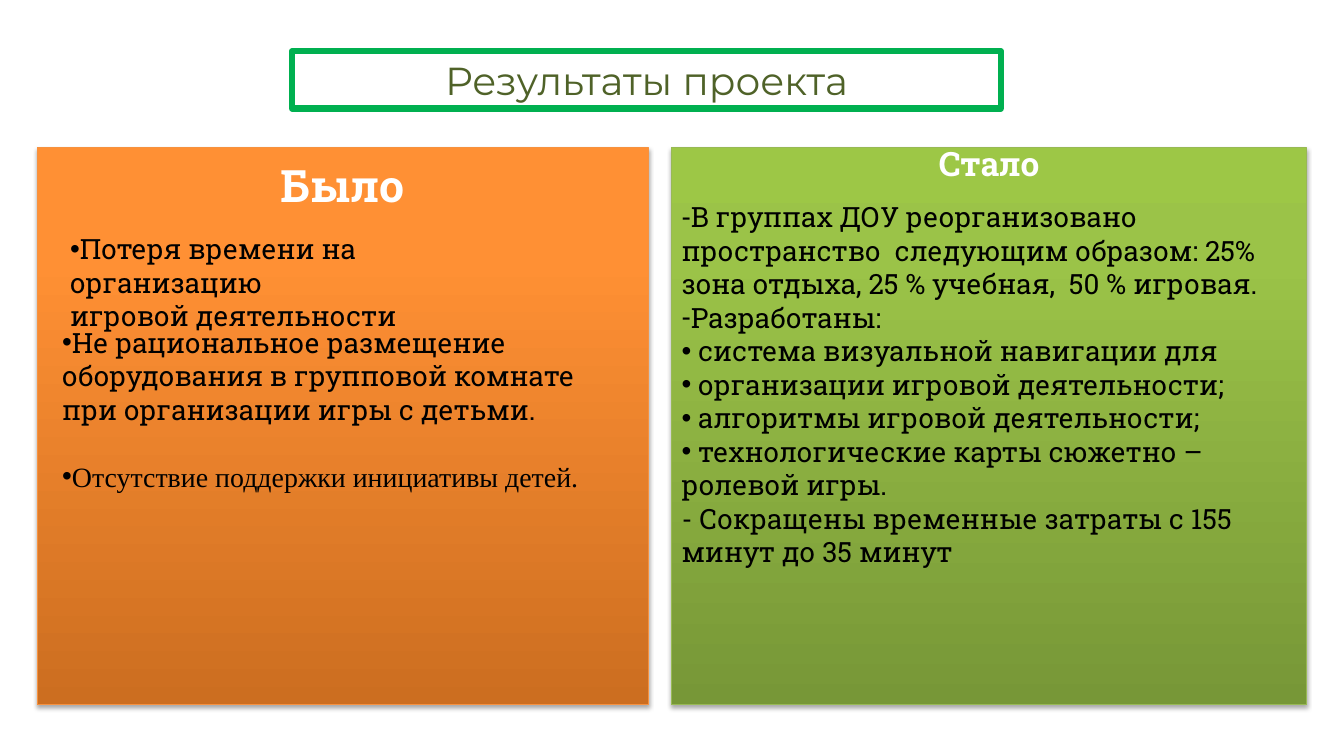
from lxml import etree
from pptx import Presentation
from pptx import util as u
from pptx.dml.color import RGBColor
from pptx.enum import text
from pptx.oxml import ns

# Content: list rows are (bullet, text)
TITLE = "Результаты проекта"
BEFORE, AFTER = "Было", "Стало"
LOSSES = [
    ("•", "Потеря времени на организацию"),
    ("", "игровой деятельности"),
]
FAULTS = [
    ("•", "Не рациональное размещение оборудования в групповой комнате "
          "при организации игры с детьми."),
    ("•", "Отсутствие поддержки инициативы детей."),
]
GAINS = [
    ("-", "В группах ДОУ реорганизовано пространство  следующим образом: "
          "25% зона отдыха, 25 % учебная,  50 % игровая."),
    ("-", "Разработаны:"),
    ("•", " система визуальной навигации для"),
    ("•", " организации игровой деятельности;"),
    ("•", " алгоритмы игровой деятельности;"),
    ("•", " технологические карты сюжетно – ролевой игры."),
    ("", "- Сокращены временные затраты с 155 минут до 35 минут"),
]


class Theme:
    title, slab, serif = "Montserrat", "Roboto Slab", "Times New Roman"
    olive, frame, white, black = "4F6228", "00B050", "FFFFFF", "000000"
    # Gradient stops from bottom to top, then the outline
    orange = [(0, "CC6E20"), (80, "FF9034"), (100, "FF9136")], "F69240"
    green = [(0, "779737"), (80, "9BC348"), (100, "9DC746")], "98B955"
    big, head, sub, body = 28, 32, 24, 20


# Places: left, top, width, height in percent of the slide
SPOTS = {
    "title": (21.73, 6.82, 52.73, 7.62),
    "before": (2.76, 19.65, 45.48, 74.2),
    "after": (49.96, 19.65, 47.27, 74.2),
    "losses": (4.48, 30.21, 33.6, 14.8),
    "faults": (3.88, 42.65, 43.76, 23.8),
    "gains": (49.96, 25.94, 46.08, 58.96),
}

deck = Presentation()
deck.slide_width, deck.slide_height = u.Inches(13.39), u.Inches(7.48)
slide = deck.slides.add_slide(deck.slide_layouts[4])


def spot(name):
    sides = (deck.slide_width, deck.slide_height) * 2
    return [round(side * part / 100) for side, part in zip(sides, SPOTS[name])]


def place(shape, name):
    shape.left, shape.top, shape.width, shape.height = spot(name)
    frame = shape.text_frame
    frame.word_wrap = True
    frame.auto_size = text.MSO_AUTO_SIZE.NONE
    frame.vertical_anchor = text.MSO_ANCHOR.TOP
    return frame


def style(run, font, size, color, bold=False):
    run.font.name, run.font.size, run.font.bold = font, u.Pt(size), bold
    run.font.color.rgb = RGBColor.from_string(color)


def outline(shape, color, width):
    shape.line.color.rgb = RGBColor.from_string(color)
    shape.line.width = u.Pt(width)


def label(shape, name, words, *look):
    frame = place(shape, name)
    frame.text = words
    line = frame.paragraphs[0]
    line.alignment = text.PP_ALIGN.CENTER
    line.space_before = u.Pt(0)
    style(line.runs[0], *look)
    return frame


def panel(shape, name, words, size, paint):
    stops, edge = paint
    frame = label(shape, name, words, Theme.slab, size, Theme.white, True)
    # Three-stop gradient, running upwards
    shape.fill.gradient()
    grad = shape._element.spPr.find(ns.qn("a:gradFill"))
    for part in list(grad):
        grad.remove(part)
    marks = etree.SubElement(grad, ns.qn("a:gsLst"))
    for pos, color in stops:
        mark = etree.SubElement(marks, ns.qn("a:gs"), pos=str(pos * 1000))
        etree.SubElement(mark, ns.qn("a:srgbClr"), val=color)
    etree.SubElement(grad, ns.qn("a:lin"), ang="16200000", scaled="0")
    outline(shape, edge, 0.75)
    # Soft shadow below
    shape.shadow.inherit = False
    glow = shape._element.spPr.find(ns.qn("a:effectLst"))
    cast = etree.SubElement(glow, ns.qn("a:outerShdw"), blurRad=str(u.Pt(3.1)),
                            dist=str(u.Pt(1.8)), dir="5400000", rotWithShape="0")
    tint = etree.SubElement(cast, ns.qn("a:srgbClr"), val=Theme.black)
    etree.SubElement(tint, ns.qn("a:alpha"), val="35000")
    return frame


def fill_list(shape, name, rows):
    frame = place(shape, name)
    frame.text = "\n".join(words for _, words in rows)
    for line, (sign, _) in zip(frame.paragraphs, rows):
        line.space_before = u.Pt(0)
        props = line._p.get_or_add_pPr()
        props.set("marL", "0")
        props.set("indent", "0")
        if sign:
            etree.SubElement(props, ns.qn("a:buFont"), typeface="Arial")
            etree.SubElement(props, ns.qn("a:buChar"), char=sign)
        else:
            etree.SubElement(props, ns.qn("a:buNone"))
        style(line.runs[0], Theme.slab, Theme.body, Theme.black)
    return frame


# Title in a green frame
head = slide.shapes.title
label(head, "title", TITLE, Theme.title, Theme.big, Theme.olive)
head.text_frame.vertical_anchor = text.MSO_ANCHOR.MIDDLE
outline(head, Theme.frame, 4.5)

# Panels with their headings
holds = slide.placeholders
panel(holds[1], "before", BEFORE, Theme.head, Theme.orange).margin_top = u.Inches(0.1)
after = panel(holds[3], "after", AFTER, Theme.sub, Theme.green)
after.margin_top = 0
after.paragraphs[0].line_spacing = 0.9

# Lists
fill_list(holds[4], "gains", GAINS)
fill_list(slide.shapes.add_textbox(*spot("losses")), "losses", LOSSES)
last = fill_list(holds[2], "faults", FAULTS).paragraphs[-1]
last.space_before = u.Pt(24)
last.runs[0].font.name = Theme.serif

deck.save("out.pptx")
